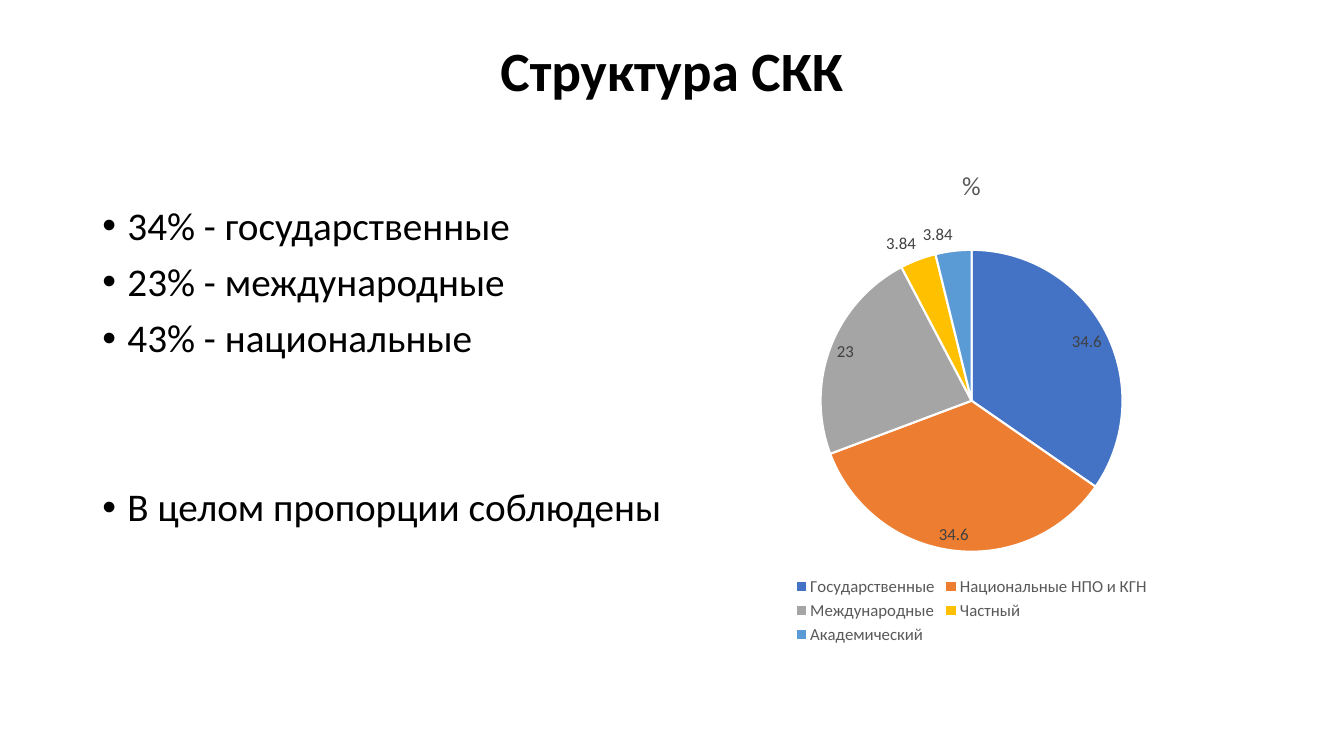
"""Build the slide on the structure of the committee."""
from dataclasses import dataclass

import pptx
import pptx.chart.data
import pptx.dml.color
import pptx.enum.chart
import pptx.enum.text
import pptx.oxml
import pptx.util


@dataclass(frozen=True)
class Theme:
    """Colours, font and type sizes of the slide."""
    font: str = "Calibri"
    text: str = "000000"
    chart_text: str = "595959"
    label_text: str = "404040"
    background: str = "FFFFFF"
    slices: tuple = ("4472C4", "ED7D31", "A5A5A5", "FFC000", "5B9BD5")
    title_size: float = 39.6
    body_size: float = 28
    chart_title_size: float = 18.6
    chart_size: float = 12


class SlideBuilder:
    """Holds the theme and the current slide, and adds elements to it."""

    def __init__(self, presentation, theme):
        """Start a title-only slide."""
        self.theme = theme
        self.slide = presentation.slides.add_slide(presentation.slide_layouts[5])

    def style_font(self, font, size, color, bold=False):
        """Apply the theme font with a size and a colour."""
        font.name = self.theme.font
        font.size = pptx.util.Pt(size)
        font.bold = bold
        font.color.rgb = pptx.dml.color.RGBColor.from_string(color)

    def title(self, text, *box):
        """Move, fill and format the title placeholder."""
        shape = self.slide.shapes.title
        shape.left, shape.top, shape.width, shape.height = map(pptx.util.Pt, box)
        frame = shape.text_frame
        frame.text = text
        frame.auto_size = pptx.enum.text.MSO_AUTO_SIZE.NONE
        frame.vertical_anchor = pptx.enum.text.MSO_ANCHOR.MIDDLE
        paragraph = frame.paragraphs[0]
        paragraph.alignment = pptx.enum.text.PP_ALIGN.CENTER
        paragraph.line_spacing = 0.9
        self.style_font(paragraph.font, self.theme.title_size, self.theme.text, True)

    def bullets(self, items, *box):
        """Add a bulleted list of (text, space before) items."""
        shape = self.slide.shapes.add_textbox(*map(pptx.util.Pt, box))
        frame = shape.text_frame
        frame.word_wrap = True
        for index, (text, space_before) in enumerate(items):
            paragraph = frame.add_paragraph() if index else frame.paragraphs[0]
            paragraph.text = text
            paragraph.line_spacing = 0.9
            paragraph.space_before = pptx.util.Pt(space_before)
            self.style_font(paragraph.font, self.theme.body_size, self.theme.text)
            properties = paragraph._p.get_or_add_pPr()
            indent = pptx.util.Pt(18)
            properties.set("marL", str(indent))
            properties.set("indent", str(-indent))
            for tag, name, value in (("a:buFont", "typeface", "Arial"),
                                     ("a:buChar", "char", "•")):
                bullet = pptx.oxml.xmlchemy.OxmlElement(tag)
                bullet.set(name, value)
                properties.append(bullet)

    def pie(self, title, values, *box):
        """Add a pie chart with value labels and a legend below."""
        theme = self.theme
        data = pptx.chart.data.CategoryChartData()
        data.categories = list(values)
        data.add_series("%", list(values.values()))
        chart = self.slide.shapes.add_chart(
            pptx.enum.chart.XL_CHART_TYPE.PIE, *map(pptx.util.Pt, box), data).chart
        self.style_font(chart.font, theme.chart_size, theme.chart_text)

        chart.has_title = True
        chart.chart_title.include_in_layout = False
        chart.chart_title.text_frame.text = title
        paragraph = chart.chart_title.text_frame.paragraphs[0]
        self.style_font(paragraph.font, theme.chart_title_size, theme.chart_text)

        chart.has_legend = True
        chart.legend.position = pptx.enum.chart.XL_LEGEND_POSITION.BOTTOM
        chart.legend.include_in_layout = False
        self.style_font(chart.legend.font, theme.chart_size, theme.chart_text)

        plot = chart.plots[0]
        plot.vary_by_categories = True
        series = plot.series[0]
        for index, color in enumerate(theme.slices):
            slice_format = series.points[index].format
            slice_format.fill.solid()
            slice_format.fill.fore_color.rgb = pptx.dml.color.RGBColor.from_string(color)
            slice_format.line.width = pptx.util.Pt(1.5)
            slice_format.line.color.rgb = pptx.dml.color.RGBColor.from_string(theme.background)

        labels = series.data_labels
        labels.show_value = True
        labels.position = pptx.enum.chart.XL_LABEL_POSITION.BEST_FIT
        self.style_font(labels.font, theme.chart_size, theme.label_text)


def main():
    """Build and save the presentation."""
    presentation = pptx.Presentation()
    presentation.slide_width = pptx.util.Pt(960)
    presentation.slide_height = pptx.util.Pt(540)
    builder = SlideBuilder(presentation, Theme())
    builder.title("Структура СКК", 66, 28.75, 828, 47.5)
    builder.pie("%", {
        "Государственные": 34.6,
        "Национальные НПО и КГН": 34.6,
        "Международные": 23,
        "Частный": 3.84,
        "Академический": 3.84,
    }, 480, 105, 428, 358.5)
    builder.bullets([
        ("34% - государственные", 10),
        ("23% - международные", 10),
        ("43% - национальные", 10),
        ("В целом пропорции соблюдены", 90.5),
    ], 66, 143.75, 828, 342.75)
    presentation.save("out.pptx")


if __name__ == "__main__":
    main()
